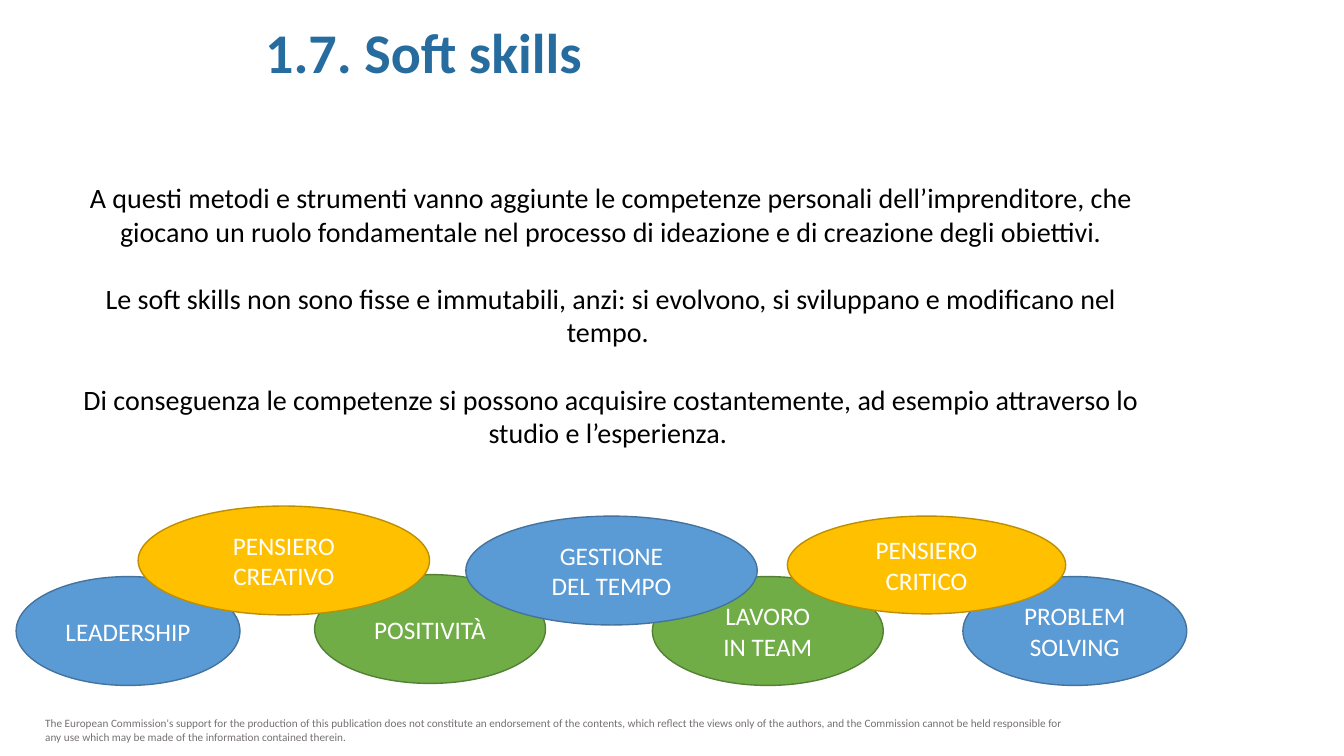
import pptx
import pptx.util
import pptx.dml.color
import pptx.enum.shapes
import pptx.enum.text
from lxml import etree

Inches, Pt = pptx.util.Inches, pptx.util.Pt
ALIGN = pptx.enum.text.PP_ALIGN
ANCHOR = pptx.enum.text.MSO_ANCHOR
FONT = "Calibri"
COLORS = {
    "title": "266C9F", "text": "000000", "note": "767171", "white": "FFFFFF",
    "blue": "5B9BD5", "blue line": "43739E",
    "green": "70AD47", "green line": "538035",
    "gold": "FFC000", "gold line": "BD8E00",
}

TITLE = "1.7. Soft skills"
BODY = [
    "A questi metodi e strumenti vanno aggiunte le competenze personali "
    "dell’imprenditore, che giocano un ruolo fondamentale nel processo di "
    "ideazione e di creazione degli obiettivi.",
    "Le soft skills non sono fisse e immutabili, anzi: si evolvono, si "
    "sviluppano e modificano nel tempo. ",
    "Di conseguenza le competenze si possono acquisire costantemente, ad "
    "esempio attraverso lo studio e l’esperienza. ",
]
NOTE = (
    "The European Commission's support for the production of this publication "
    "does not constitute an endorsement of the contents, which reflect the "
    "views only of the authors, and the Commission cannot be held responsible "
    "for any use which may be made of the information contained therein."
)
# Paragraphs, colour, (left, top, width, height), from back to front
SKILLS = [
    (["POSITIVITÀ"], "green", (3.12, 5.7, 2.29, 1.08)),
    (["LEADERSHIP"], "blue", (0.16, 5.72, 2.22, 1.08)),
    (["PENSIERO", "CREATIVO"], "gold", (1.37, 5.02, 2.89, 1.08)),
    (["LAVORO", "IN TEAM"], "green", (6.47, 5.72, 2.29, 1.08)),
    (["GESTIONE", "DEL TEMPO"], "blue", (4.62, 5.12, 2.89, 1.08)),
    (["PROBLEM SOLVING"], "blue", (9.55, 5.72, 2.22, 1.08)),
    (["PENSIERO", "CRITICO"], "gold", (7.81, 5.12, 2.76, 0.97)),
]


def color(name):
    return pptx.dml.color.RGBColor.from_string(COLORS[name])


def place(shape, box):
    shape.left, shape.top, shape.width, shape.height = map(Inches, box)


def write(shape, lines, size, ink, align=ALIGN.LEFT, anchor=ANCHOR.TOP,
          bold=False, gap=0):
    """Fill a shape with plain paragraphs, gap points apart."""
    frame = shape.text_frame
    frame.word_wrap = True
    frame.auto_size = pptx.enum.text.MSO_AUTO_SIZE.NONE
    frame.vertical_anchor = anchor
    for i, line in enumerate(lines):
        para = frame.add_paragraph() if i else frame.paragraphs[0]
        para.alignment = align
        para.line_spacing = 1.0
        para.space_before = Pt(gap if i else 0)
        para.space_after = Pt(0)
        run = para.add_run()
        run.text = line
        font = run.font
        font.name, font.size, font.bold = FONT, Pt(size), bold
        font.color.rgb = color(ink)


def unbullet(frame):
    for para in frame.paragraphs:
        props = para._p.get_or_add_pPr()
        props.set("marL", "0")
        props.set("indent", "0")
        etree.SubElement(props, pptx.oxml.ns.qn("a:buNone"))


def add_skill(slide, lines, hue, box):
    oval = slide.shapes.add_shape(
        pptx.enum.shapes.MSO_SHAPE.OVAL, *map(Inches, box))
    oval.shadow.inherit = False
    oval.fill.solid()
    oval.fill.fore_color.rgb = color(hue)
    oval.line.color.rgb = color(hue + " line")
    oval.line.width = Pt(1)
    write(oval, lines, 18, "white", ALIGN.CENTER, ANCHOR.MIDDLE)


def main():
    deck = pptx.Presentation()
    deck.slide_width, deck.slide_height = Inches(13.33), Inches(7.5)
    slide = deck.slides.add_slide(deck.slide_layouts[1])

    title = slide.shapes.title
    place(title, (2.53, 0.12, 8.38, 0.77))
    write(title, [TITLE], 40, "title", bold=True)

    body = slide.placeholders[1]
    place(body, (0.6, 1.74, 10.92, 3.13))
    write(body, BODY, 20, "text", ALIGN.CENTER, gap=24)
    unbullet(body.text_frame)

    note = slide.shapes.add_textbox(*map(Inches, (0.35, 7.06, 10.46, 0.37)))
    write(note, [NOTE], 8, "note")

    for lines, hue, box in SKILLS:
        add_skill(slide, lines, hue, box)
    deck.save("out.pptx")


if __name__ == "__main__":
    main()
